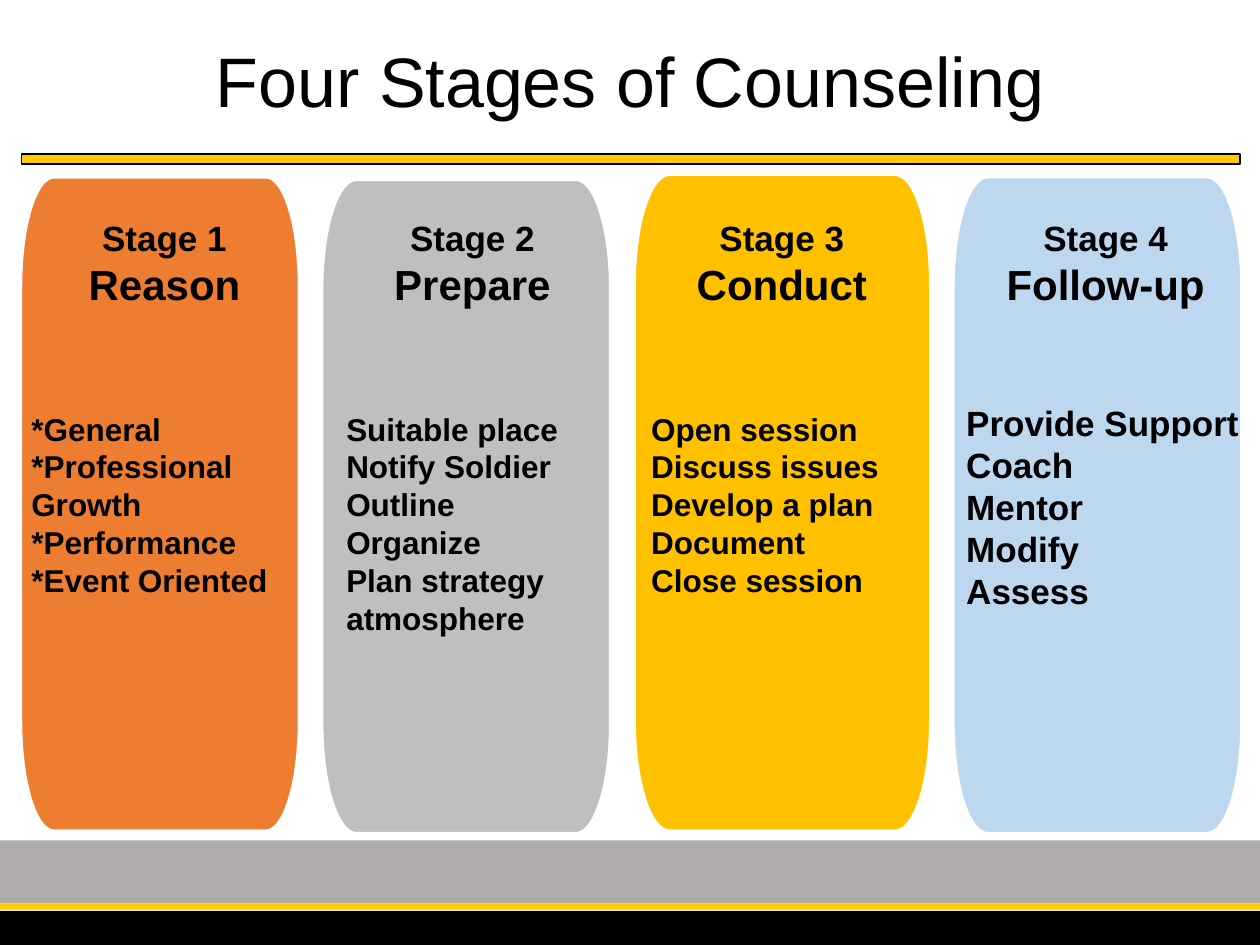
from dataclasses import dataclass

from lxml import etree
from pptx import Presentation
from pptx.dml.color import RGBColor
from pptx.enum.shapes import MSO_SHAPE
from pptx.enum.text import MSO_ANCHOR, MSO_AUTO_SIZE, PP_ALIGN
from pptx.oxml.ns import qn
from pptx.shapes.base import BaseShape
from pptx.slide import Slide
from pptx.text.text import TextFrame
from pptx.util import Inches, Pt

RECTANGLE = MSO_SHAPE.RECTANGLE
MIDDLE, TOP = MSO_ANCHOR.MIDDLE, MSO_ANCHOR.TOP
GROW, NO_FIT = MSO_AUTO_SIZE.SHAPE_TO_FIT_TEXT, MSO_AUTO_SIZE.NONE
CENTER, LEFT = PP_ALIGN.CENTER, PP_ALIGN.LEFT
ARC_FACTOR = 0.55  # control point distance of a quarter ellipse


@dataclass(frozen=True)
class Theme:
    font: str = "Arial"
    black: str = "000000"
    white: str = "FFFFFF"
    gold: str = "FFCC00"
    gray: str = "AFABAB"
    title_size: float = 40
    label_size: float = 20
    name_size: float = 24
    item_size: float = 18
    large_item_size: float = 20
    line_width: float = 1


THEME = Theme()


@dataclass(frozen=True)
class Area:
    left: float
    top: float
    width: float
    height: float

    def lengths(self) -> tuple[Inches, ...]:
        return tuple(map(Inches, (self.left, self.top, self.width, self.height)))


@dataclass(frozen=True)
class Bar:
    area: Area
    color: str
    outline: str | None = None


@dataclass(frozen=True)
class Stage:
    name: str
    items: tuple[str, ...]
    color: str
    panel: Area
    text: Area
    item_size: float = THEME.item_size
    item_gap: float = 57.5


BARS = (
    Bar(Area(0, 6.67, 10, 0.5), THEME.gray),
    Bar(Area(0, 7.17, 10, 0.05), THEME.gold),
    Bar(Area(0, 7.23, 10, 0.27), THEME.black),
    Bar(Area(0.17, 1.22, 9.67, 0.08), THEME.gold, THEME.black),
)

STAGES = (
    Stage("Reason",
          ("*General", "*Professional Growth", "*Performance", "*Event Oriented"),
          "ED7D31", Area(0.17, 1.41, 2.2, 5.18), Area(0.15, 1.67, 2.31, 3.16)),
    Stage("Prepare",
          ("Suitable place", "Notify Soldier", "Outline", "Organize",
           "Plan strategy", "atmosphere"),
          "BFBFBF", Area(2.56, 1.43, 2.28, 5.18), Area(2.65, 1.67, 2.2, 4.51)),
    Stage("Conduct",
          ("Open session", "Discuss issues", "Develop a plan", "Document",
           "Close session"),
          "FFC000", Area(5.04, 1.39, 2.34, 5.2), Area(5.07, 1.67, 2.27, 4.17)),
    Stage("Follow-up",
          ("Provide Support", "Coach", "Mentor", "Modify", "Assess"),
          "BDD7EE", Area(7.57, 1.41, 2.28, 5.2), Area(7.57, 1.67, 2.41, 4.07),
          THEME.large_item_size, 52.9),
)


def paint(shape: BaseShape, color: str, outline: str | None) -> None:
    shape.shadow.inherit = False
    shape.fill.solid()
    shape.fill.fore_color.rgb = RGBColor.from_string(color)
    if outline is None:
        shape.line.fill.background()
    else:
        shape.line.color.rgb = RGBColor.from_string(outline)
        shape.line.width = Pt(THEME.line_width)


def add_bar(slide: Slide, bar: Bar) -> None:
    paint(slide.shapes.add_shape(RECTANGLE, *bar.area.lengths()),
          bar.color, bar.outline)


def round_corners(shape: BaseShape) -> None:
    """Turn every second segment of an eight-sided outline into an arc."""
    ends = list(shape.element.iter(qn("a:pt")))
    points = [(int(end.get("x")), int(end.get("y"))) for end in ends]
    for index in range(1, len(points), 2):
        start, end = points[index - 1], points[index]
        vertical_first = index % 4 == 1
        corner = (start[0], end[1]) if vertical_first else (end[0], start[1])
        segment = ends[index].getparent()
        segment.tag = qn("a:cubicBezTo")
        for position, origin in enumerate((start, end)):
            x, y = (round(a + ARC_FACTOR * (b - a)) for a, b in zip(origin, corner))
            control = etree.Element(qn("a:pt"), x=str(x), y=str(y))
            segment.insert(position, control)


def add_panel(slide: Slide, stage: Stage) -> None:
    left, top, width, height = stage.panel.lengths()
    right, bottom = left + width, top + height
    radius_x, radius_y = round(0.118 * width), round(height / 6)
    near_x, far_x = left + radius_x, right - radius_x
    near_y, far_y = top + radius_y, bottom - radius_y
    builder = slide.shapes.build_freeform(left, near_y)
    builder.add_line_segments((
        (near_x, top), (far_x, top), (right, near_y), (right, far_y),
        (far_x, bottom), (near_x, bottom), (left, far_y), (left, near_y),
    ), close=True)
    panel = builder.convert_to_shape()
    round_corners(panel)
    paint(panel, stage.color, THEME.white)


def add_text_box(slide: Slide, area: Area, anchor: MSO_ANCHOR,
                 fit: MSO_AUTO_SIZE) -> TextFrame:
    frame = slide.shapes.add_textbox(*area.lengths()).text_frame
    settings = {"word_wrap": True, "auto_size": fit, "vertical_anchor": anchor}
    for name, value in settings.items():
        setattr(frame, name, value)
    return frame


def write_line(frame: TextFrame, text: str, size: float, bold: bool = True,
               **paragraph_format: object) -> None:
    """Fill the empty first paragraph, or append another one."""
    first = frame.paragraphs[0]
    para = frame.add_paragraph() if first.runs else first
    for name, value in paragraph_format.items():
        setattr(para, name, value)
    span = para.add_run()
    span.text = text
    font_format = {"name": THEME.font, "size": Pt(size), "bold": bold}
    for name, value in font_format.items():
        setattr(span.font, name, value)
    span.font.color.rgb = RGBColor.from_string(THEME.black)


def add_stage_text(slide: Slide, number: int, stage: Stage) -> None:
    frame = add_text_box(slide, stage.text, TOP, GROW)
    write_line(frame, f"Stage {number}", THEME.label_size, alignment=CENTER)
    write_line(frame, stage.name, THEME.name_size, alignment=CENTER)
    for index, item in enumerate(stage.items):
        gap = 0 if index else stage.item_gap
        write_line(frame, item, stage.item_size, alignment=LEFT,
                   space_before=Pt(gap))


def main() -> None:
    deck = Presentation()
    deck.slide_width, deck.slide_height = Inches(10), Inches(7.5)
    slide = deck.slides.add_slide(deck.slide_layouts[6])
    for bar in BARS:
        add_bar(slide, bar)
    for stage in STAGES:
        add_panel(slide, stage)
    title = add_text_box(slide, Area(0.17, 0.13, 9.66, 1.09), MIDDLE, NO_FIT)
    write_line(title, "Four Stages of Counseling", THEME.title_size, bold=False,
               alignment=CENTER, line_spacing=0.9)
    for number, stage in enumerate(STAGES, start=1):
        add_stage_text(slide, number, stage)
    deck.save("out.pptx")


if __name__ == "__main__":
    main()
